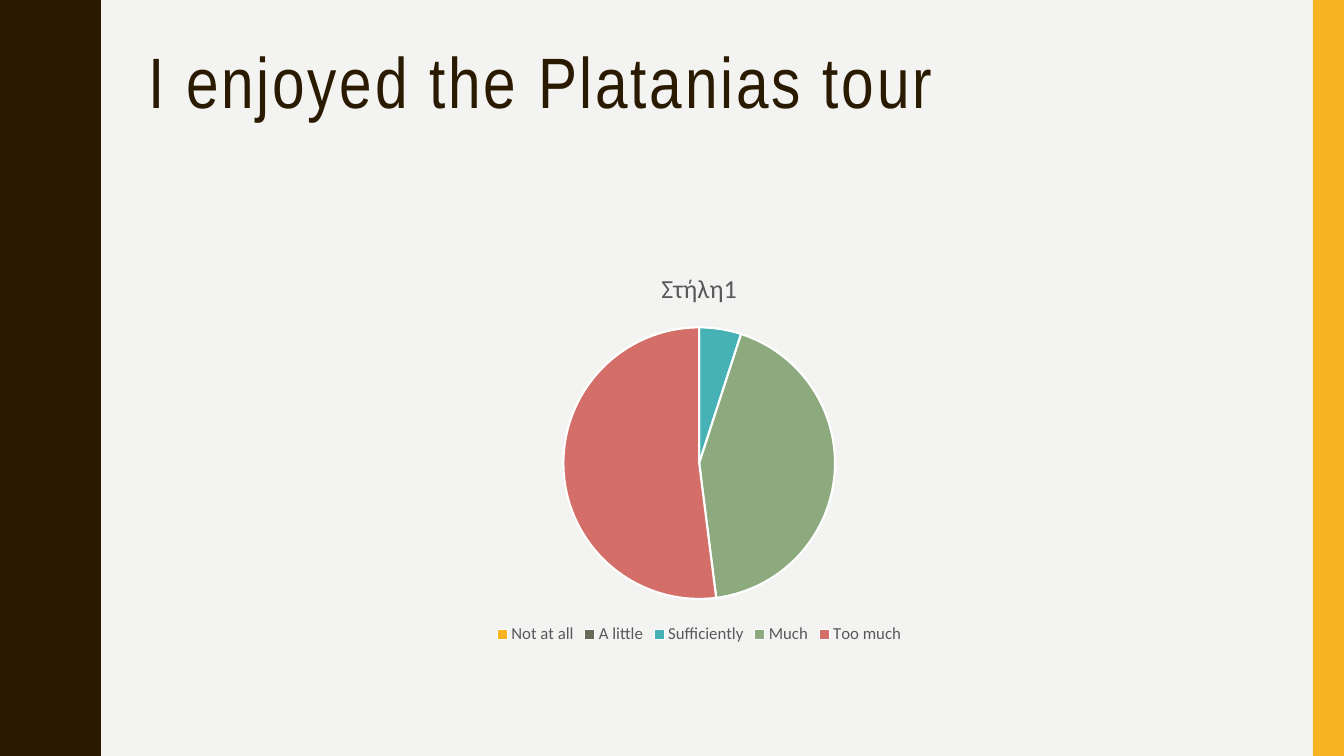
import pptx
import pptx.chart.data
import pptx.dml.color
import pptx.enum.chart
import pptx.enum.shapes
import pptx.enum.text
import pptx.util
from pptx.util import Inches

WIDTH, HEIGHT = 13.33, 7.5
BACKGROUND, BROWN, YELLOW, GREY = "F3F3F2", "2A1A00", "F8B323", "595959"
TITLE = "I enjoyed the Platanias tour"
SERIES = "Στήλη1"
ANSWERS = [
    ("Not at all", 0, YELLOW),
    ("A little", 0, "656A59"),
    ("Sufficiently", 5, "46B2B5"),
    ("Much", 43, "8CAA7E"),
    ("Too much", 52, "D36F68"),
]
# Half a wave from trough to crest, as (x, y) in inches
WAVE_LENGTH, WAVE_COUNT = 1.5, 5
HALF_WAVE = [
    (0.78, 0), (0.78, 0.07), (0.79, 0.14), (0.8, 0.2), (0.81, 0.25), (0.83, 0.29),
    (0.85, 0.33), (0.87, 0.38), (0.89, 0.42), (0.91, 0.46), (0.93, 0.5),
    (0.95, 0.55), (0.96, 0.61), (0.97, 0.68), (0.97, 0.75),
]


def color(value):
    return pptx.dml.color.RGBColor.from_string(value)


def paint(shape, fill):
    """Give a shape a flat fill without outline or shadow."""
    shape.shadow.inherit = False
    shape.fill.solid()
    shape.fill.fore_color.rgb = color(fill)
    shape.line.fill.background()


def format_font(font, size, name, fill):
    font.size = pptx.util.Pt(size)
    font.name = name
    font.bold = False
    font.color.rgb = color(fill)


def write(text_frame, text, size, name, fill, line_spacing=None, tracking=None):
    paragraph = text_frame.paragraphs[0]
    paragraph.line_spacing = line_spacing
    run = paragraph.add_run()
    run.text = text
    format_font(run.font, size, name, fill)
    if tracking:
        run._r.get_or_add_rPr().set("spc", str(tracking * 100))


def add_wavy_band(slide):
    crest_to_trough = [(x, WAVE_LENGTH - y) for x, y in reversed(HALF_WAVE[:-1])]
    wave = HALF_WAVE + crest_to_trough
    edge = [(x, y + index * WAVE_LENGTH)
            for index in range(WAVE_COUNT) for x, y in wave]
    builder = slide.shapes.build_freeform(0, 0, scale=Inches(1))
    builder.add_line_segments(edge + [(0, HEIGHT)], close=True)
    paint(builder.convert_to_shape(), BROWN)


def add_title(slide):
    box = slide.shapes.add_textbox(Inches(1.37), Inches(0.42), Inches(11.13), Inches(1.63))
    box.text_frame.word_wrap = True
    box.text_frame.vertical_anchor = pptx.enum.text.MSO_ANCHOR.TOP
    write(box.text_frame, TITLE, 51, "Arial Narrow", BROWN, line_spacing=0.9, tracking=2)


def add_pie(slide):
    data = pptx.chart.data.CategoryChartData()
    data.categories = [answer for answer, _, _ in ANSWERS]
    data.add_series(SERIES, [value for _, value, _ in ANSWERS])
    chart = slide.shapes.add_chart(
        pptx.enum.chart.XL_CHART_TYPE.PIE,
        Inches(1.37), Inches(2.5), Inches(11.13), Inches(3.93), data).chart
    format_font(chart.font, 10, "Calibri", "000000")
    chart.has_title = True
    write(chart.chart_title.text_frame, SERIES, 18.6, "Calibri", GREY)
    chart.chart_title.include_in_layout = False
    chart.has_legend = True
    chart.legend.position = pptx.enum.chart.XL_LEGEND_POSITION.BOTTOM
    chart.legend.include_in_layout = False
    format_font(chart.legend.font, 12, "Calibri", GREY)
    plot = chart.plots[0]
    plot.vary_by_categories = True
    for index, (_, _, fill) in enumerate(ANSWERS):
        slice_format = plot.series[0].points[index].format
        slice_format.fill.solid()
        slice_format.fill.fore_color.rgb = color(fill)
        slice_format.line.color.rgb = color("FFFFFF")
        slice_format.line.width = pptx.util.Pt(1.5)


def main():
    presentation = pptx.Presentation()
    presentation.slide_width, presentation.slide_height = Inches(WIDTH), Inches(HEIGHT)
    slide = presentation.slides.add_slide(presentation.slide_layouts[6])
    slide.background.fill.solid()
    slide.background.fill.fore_color.rgb = color(BACKGROUND)
    add_wavy_band(slide)
    stripe = slide.shapes.add_shape(
        pptx.enum.shapes.MSO_SHAPE.RECTANGLE,
        Inches(13.02), 0, Inches(0.31), Inches(HEIGHT))
    paint(stripe, YELLOW)
    add_title(slide)
    add_pie(slide)
    presentation.save("out.pptx")


if __name__ == "__main__":
    main()
